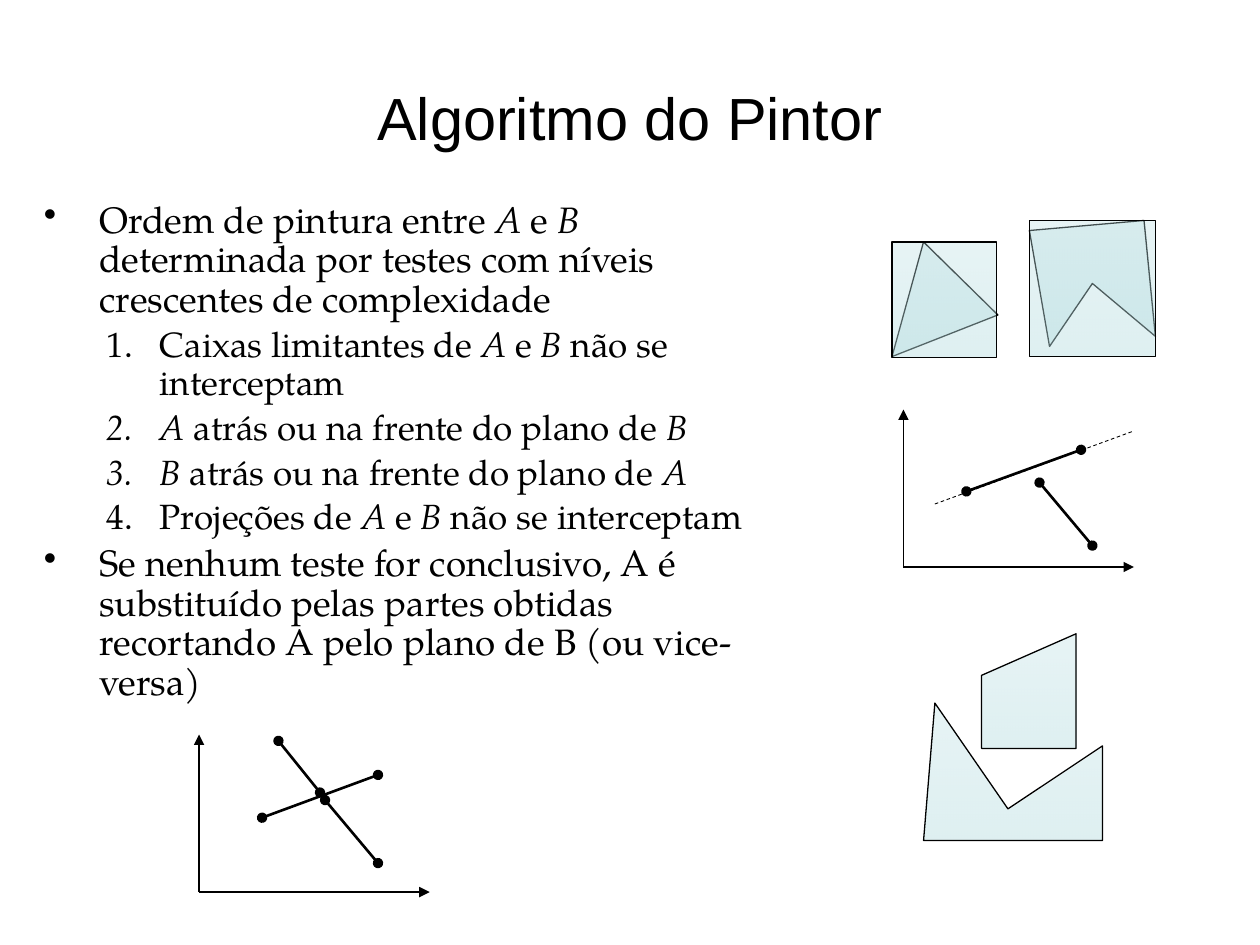
"""Build the slide that explains the painter's algorithm."""
import dataclasses

import pptx
import pptx.dml.color
import pptx.enum.dml
import pptx.enum.shapes
import pptx.enum.text
import pptx.oxml.ns
import pptx.oxml.xmlchemy
import pptx.util
from pptx.util import Inches


@dataclasses.dataclass(frozen=True)
class Theme:
    ink: pptx.dml.color.RGBColor = pptx.dml.color.RGBColor(0, 0, 0)
    glass: pptx.dml.color.RGBColor = pptx.dml.color.RGBColor(0xBB, 0xE0, 0xE3)
    glass_opacity: tuple = (35, 48)
    title_font: str = "Arial"
    body_font: str = "TeX Gyre Pagella"
    title_size: float = 34
    bullet_size: float = 21
    step_size: float = 20
    thin: float = 0.75
    thick: float = 1.5
    dashed: float = 0.5


THEME = Theme()

BULLET = dict(level=0, margin=0.44, hanging=0.44, size=THEME.bullet_size,
              marker=("a:buChar", {"char": "•"}))
STEP = dict(level=1, margin=0.92, hanging=0.42, size=THEME.step_size,
            marker=("a:buAutoNum", {"type": "arabicPeriod"}))

# Asterisks delimit the italic parts.
BODY = [
    (BULLET, "Ordem de pintura entre *A* e *B* determinada por testes com níveis "
             "crescentes de complexidade"),
    (STEP, "Caixas limitantes de *A* e *B* não se interceptam"),
    (STEP, "*A* atrás ou na frente do plano de *B*"),
    (STEP, "*B* atrás ou na frente do plano de *A*"),
    (STEP, "Projeções de *A* e *B* não se interceptam"),
    (BULLET, "Se nenhum teste for conclusivo, A é substituído pelas partes obtidas "
             "recortando A pelo plano de B (ou vice-versa)"),
]

TRIANGLE = [(7.33, 1.92), (7.08, 2.83), (7.92, 2.5)]
NOTCHED_POLYGON = [(8.17, 1.83), (8.33, 2.75), (8.67, 2.25), (9.17, 2.67), (9.08, 1.75)]
BOUNDING_BOXES = [(7.08, 1.92, 0.83, 0.92), (8.17, 1.75, 1, 1.08)]
VALLEY = [(7.42, 5.58), (7.33, 6.67), (8.75, 6.67), (8.75, 5.92), (8, 6.42)]
TRAPEZOID = [(7.79, 5.36), (7.79, 5.94), (8.54, 5.94), (8.54, 5.03)]

PLANE_AXES = (7.17, 4.5)
PLANE_SEGMENTS = [((8.25, 3.83), (8.67, 4.33)), ((7.67, 3.9), (8.58, 3.57))]
PLANE_EXTENSION = ((7.42, 4), (9, 3.42))
CLIPPING_AXES = (1.58, 7.08)
CLIPPING_SEGMENTS = [((2.58, 6.35), (3, 6.85)), ((2.08, 6.49), (3, 6.15)),
                     ((2.21, 5.88), (2.54, 6.29))]


def add_xml(parent, tag, **attributes):
    """Append a DrawingML element to a parent and return it."""
    element = pptx.oxml.xmlchemy.OxmlElement(tag)
    for name, value in attributes.items():
        element.set(name, str(value))
    parent.append(element)
    return element


def format_run(run, font_name, size, italic=False):
    """Give a run its font, size, slant and colour."""
    run.font.name = font_name
    run.font.size = pptx.util.Pt(size)
    run.font.italic = italic
    run.font.color.rgb = THEME.ink


def add_text_frame(slide, left, top, width, height):
    """Add a wrapping text box and return its text frame."""
    box = slide.shapes.add_textbox(Inches(left), Inches(top), Inches(width), Inches(height))
    box.text_frame.word_wrap = True
    return box.text_frame


def add_title(slide, text):
    """Add the centred title."""
    text_frame = add_text_frame(slide, 0.5, 0.3, 9, 1.25)
    text_frame.vertical_anchor = pptx.enum.text.MSO_ANCHOR.MIDDLE
    text_frame.text = text
    paragraph = text_frame.paragraphs[0]
    paragraph.alignment = pptx.enum.text.PP_ALIGN.CENTER
    format_run(paragraph.runs[0], THEME.title_font, THEME.title_size)


def add_body(slide, items):
    """Add the bulleted and numbered text."""
    text_frame = add_text_frame(slide, 0.25, 1.55, 5.83, 4.95)
    for index, (style, text) in enumerate(items):
        paragraph = text_frame.add_paragraph() if index else text_frame.paragraphs[0]
        paragraph.level = style["level"]
        paragraph.line_spacing = 0.9
        paragraph.space_before = pptx.util.Pt(0.2 * style["size"])
        properties = paragraph._p.get_or_add_pPr()
        properties.set("marL", str(Inches(style["margin"])))
        properties.set("indent", str(-Inches(style["hanging"])))
        tag, attributes = style["marker"]
        add_xml(properties, tag, **attributes)
        for position, part in enumerate(text.split("*")):
            if part:
                run = paragraph.add_run()
                run.text = part
                format_run(run, THEME.body_font, style["size"], position % 2 == 1)


def style_glass(shape):
    """Give a shape the translucent gradient and a thin outline."""
    shape.shadow.inherit = False
    shape.fill.gradient()
    shape.fill.gradient_angle = 270
    for stop in shape.fill.gradient_stops:
        stop.color.rgb = THEME.glass
    colors = shape._element.spPr.iter(pptx.oxml.ns.qn("a:srgbClr"))
    for color, opacity in zip(colors, THEME.glass_opacity):
        add_xml(color, "a:alpha", val=opacity * 1000)
    shape.line.color.rgb = THEME.ink
    shape.line.width = pptx.util.Pt(THEME.thin)


def add_polygon(slide, points):
    """Add a closed translucent polygon."""
    corners = [(Inches(x), Inches(y)) for x, y in points]
    builder = slide.shapes.build_freeform(*corners[0])
    builder.add_line_segments(corners[1:], close=True)
    style_glass(builder.convert_to_shape())


def add_bounding_box(slide, left, top, width, height):
    """Add a translucent bounding rectangle."""
    style_glass(slide.shapes.add_shape(
        pptx.enum.shapes.MSO_SHAPE.RECTANGLE,
        Inches(left), Inches(top), Inches(width), Inches(height)))


def add_line(slide, start, end, width, head=None, tail=None, dash=None):
    """Add a straight line with optional end marks and dashes."""
    connector = slide.shapes.add_connector(
        pptx.enum.shapes.MSO_CONNECTOR.STRAIGHT, *map(Inches, start + end))
    connector.line.color.rgb = THEME.ink
    connector.line.width = pptx.util.Pt(width)
    if dash:
        connector.line.dash_style = dash
    outline = connector.line._get_or_add_ln()
    for tag, mark in (("a:headEnd", head), ("a:tailEnd", tail)):
        if mark:
            add_xml(outline, tag, type=mark)
    add_xml(connector._element.spPr, "a:effectLst")


def add_axes(slide, origin):
    """Add a vertical and a horizontal axis from an origin."""
    x, y = origin
    for end in ((x, y - 1.25), (x + 1.83, y)):
        add_line(slide, origin, end, THEME.thin, tail="triangle")


def add_plot(slide, origin, segments):
    """Add axes and the dotted-end segments drawn over them."""
    add_axes(slide, origin)
    for start, end in segments:
        add_line(slide, start, end, THEME.thick, head="oval", tail="oval")


def main():
    """Build and save the slide."""
    presentation = pptx.Presentation()
    presentation.slide_width, presentation.slide_height = Inches(10), Inches(7.5)
    slide = presentation.slides.add_slide(presentation.slide_layouts[6])
    add_title(slide, "Algoritmo do Pintor")
    add_body(slide, BODY)
    for points in (TRIANGLE, NOTCHED_POLYGON):
        add_polygon(slide, points)
    for box in BOUNDING_BOXES:
        add_bounding_box(slide, *box)
    add_plot(slide, PLANE_AXES, PLANE_SEGMENTS)
    add_line(slide, *PLANE_EXTENSION, THEME.dashed, dash=pptx.enum.dml.MSO_LINE.DASH)
    for points in (VALLEY, TRAPEZOID):
        add_polygon(slide, points)
    add_plot(slide, CLIPPING_AXES, CLIPPING_SEGMENTS)
    presentation.save("out.pptx")


if __name__ == "__main__":
    main()
